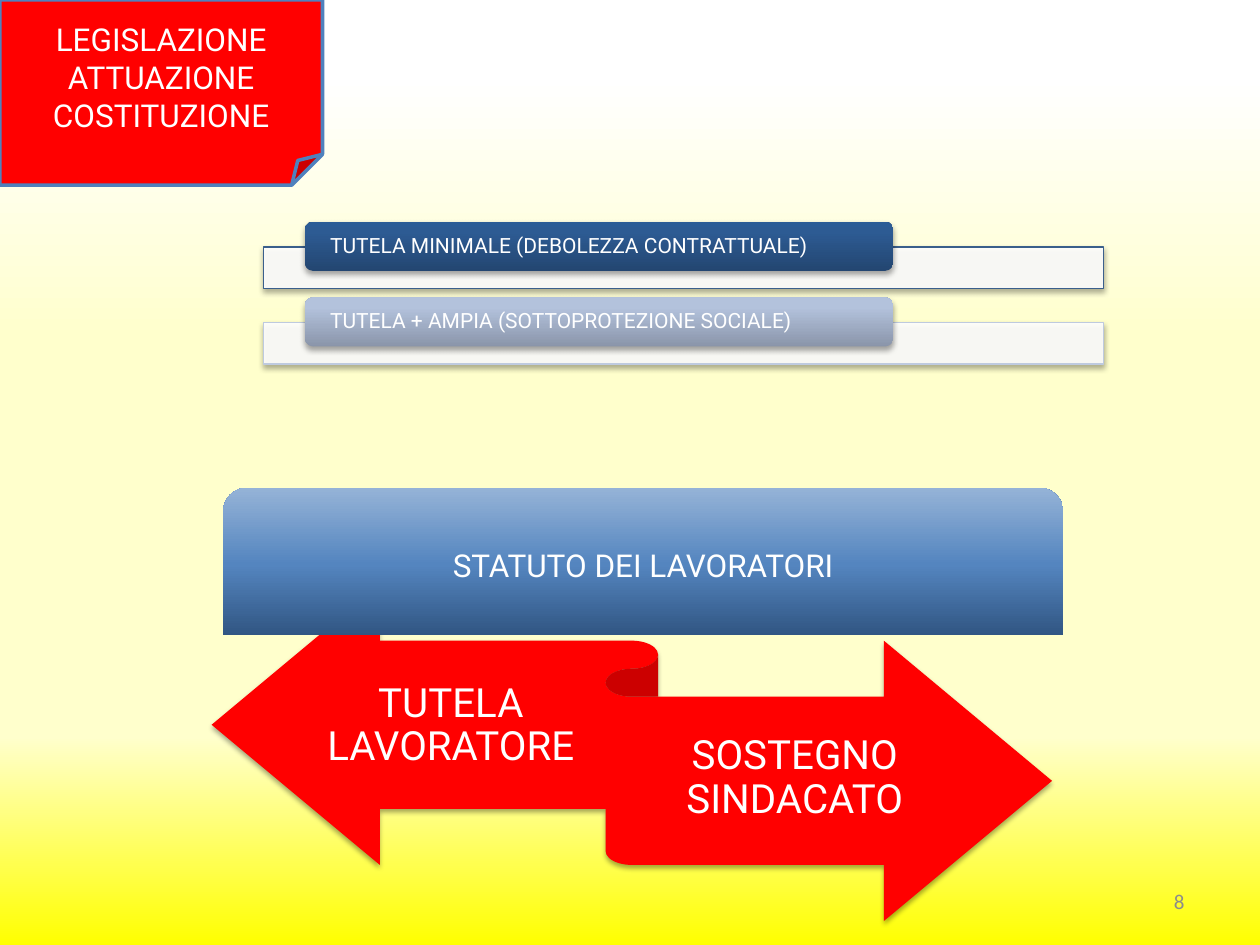
from lxml import etree
from pptx import Presentation
from pptx.dml.color import RGBColor
from pptx.enum.shapes import MSO_SHAPE
from pptx.enum.text import MSO_ANCHOR, PP_ALIGN
from pptx.oxml.ns import qn
from pptx.util import Inches, Pt

FOLDED, RECT = MSO_SHAPE.FOLDED_CORNER, MSO_SHAPE.RECTANGLE
ROUNDED, RIBBON = MSO_SHAPE.ROUNDED_RECTANGLE, MSO_SHAPE.LEFT_RIGHT_RIBBON
TOP_ROUNDED = MSO_SHAPE.ROUND_2_SAME_RECTANGLE
LEFT, CENTER, RIGHT = PP_ALIGN.LEFT, PP_ALIGN.CENTER, PP_ALIGN.RIGHT
MIDDLE = MSO_ANCHOR.MIDDLE

BACKGROUND = [(8, "FFFFFF"), (36, "FFFFCC"), (78, "FFFFCC"), (100, "FFFF00")]
STATUTE = [(0, "315683"), (48, "5485BF"), (100, "95B3D7")]
PROTECTIONS = [
    ("TUTELA MINIMALE (DEBOLEZZA CONTRATTUALE)", "3A5F8C",
     [(0, "234671"), (80, "2D5B93"), (100, "2B5C96")]),
    ("TUTELA + AMPIA (SOTTOPROTEZIONE SOCIALE)", "BECADF",
     [(0, "8A95AA"), (80, "B3C2DC"), (100, "B4C3DE")]),
]
ARROWS = [
    ("TUTELA LAVORATORE", (2.48, 5.11, 2.2, 1.31)),
    ("SOSTEGNO SINDACATO", (5.01, 5.53, 2.6, 1.31)),
]
LABEL_FORMAT = dict(margin_left=Inches(0.18), margin_right=Inches(0.18),
                    margin_top=0, margin_bottom=0)
ARROW_FORMAT = dict(margin_left=0, margin_right=0,
                    margin_top=Inches(0.09), margin_bottom=Inches(0.1))


def color(value):
    return RGBColor.from_string(value)


def add_child(parent, tag, **attributes):
    child = etree.SubElement(parent, qn(tag))
    for name, value in attributes.items():
        child.set(name, str(value))
    return child


def set_gradient(fill, element, stops, angle):
    fill.gradient()
    fill.gradient_angle = angle
    stop_list = element.find(".//" + qn("a:gsLst"))
    for stop in list(stop_list):
        stop_list.remove(stop)
    for position, value in stops:
        stop = add_child(stop_list, "a:gs", pos=position * 1000)
        add_child(stop, "a:srgbClr", val=value)


def set_shadow(shape):
    effects = shape._element.spPr.find(qn("a:effectLst"))
    shadow = add_child(effects, "a:outerShdw", blurRad=Pt(3.1), dist=Pt(1.8),
                       dir=5400000, rotWithShape=0)
    add_child(add_child(shadow, "a:srgbClr", val="000000"), "a:alpha", val=35000)


def add_block(page, kind, place, fill, line=None, width=0.75, shadow=False):
    shape = page.shapes.add_shape(kind, *map(Inches, place))
    shape.shadow.inherit = False
    if isinstance(fill, list):
        set_gradient(shape.fill, shape._element.spPr, fill, 90)
    else:
        shape.fill.solid()
        shape.fill.fore_color.rgb = color(fill)
    if line:
        shape.line.color.rgb = color(line)
        shape.line.width = Pt(width)
    else:
        shape.line.fill.background()
    if shadow:
        set_shadow(shape)
    return shape


def write(shape, text, size, align=CENTER, font="Roboto", ink="FFFFFF",
          spacing=1.0, frame_format=None):
    frame = shape.text_frame
    settings = dict(word_wrap=True, vertical_anchor=MIDDLE, **(frame_format or {}))
    for name, value in settings.items():
        setattr(frame, name, value)
    para = frame.paragraphs[0]
    para.alignment = align
    para.line_spacing = spacing
    span = para.add_run()
    span.text = text
    for name, value in dict(name=font, size=Pt(size)).items():
        setattr(span.font, name, value)
    span.font.color.rgb = color(ink)


def add_text(page, place, text, size, **options):
    write(page.shapes.add_textbox(*map(Inches, place)), text, size, **options)


def main():
    deck = Presentation()
    deck.slide_width, deck.slide_height = Inches(10), Inches(7.5)
    page = deck.slides.add_slide(deck.slide_layouts[6])
    set_gradient(page.background.fill, page._element, BACKGROUND, 270)

    note = add_block(page, FOLDED, (0, 0, 2.56, 1.47), "FF0000", "4F81BD", 2)
    write(note, "LEGISLAZIONE ATTUAZIONE COSTITUZIONE", 18)
    add_text(page, (7.17, 6.95, 2.33, 0.4), "8", 12, align=RIGHT,
             font="Calibri", ink="8C8C8C")

    for index, (text, line, stops) in enumerate(PROTECTIONS):
        top = 1.76 + 0.6 * index
        bar = add_block(page, RECT, (2.09, top + 0.2, 6.67, 0.33), "FFFFFF",
                        line, shadow=True)
        bar_color = bar._element.spPr.find(qn("a:solidFill"))[0]
        add_child(bar_color, "a:alpha", val=90000)
        add_block(page, ROUNDED, (2.42, top, 4.67, 0.39), stops, shadow=True)
        add_text(page, (2.44, top + 0.02, 4.63, 0.35), text, 12, align=LEFT,
                 spacing=0.9, frame_format=LABEL_FORMAT)

    add_block(page, RIBBON, (1.68, 4.64, 6.67, 2.67), "FF0000", shadow=True)
    for text, place in ARROWS:
        add_text(page, place, text, 23, spacing=0.9, frame_format=ARROW_FORMAT)

    statute = add_block(page, TOP_ROUNDED, (1.77, 3.87, 6.67, 1.17), STATUTE)
    write(statute, "STATUTO DEI LAVORATORI", 18)
    deck.save("out.pptx")


if __name__ == "__main__":
    main()
